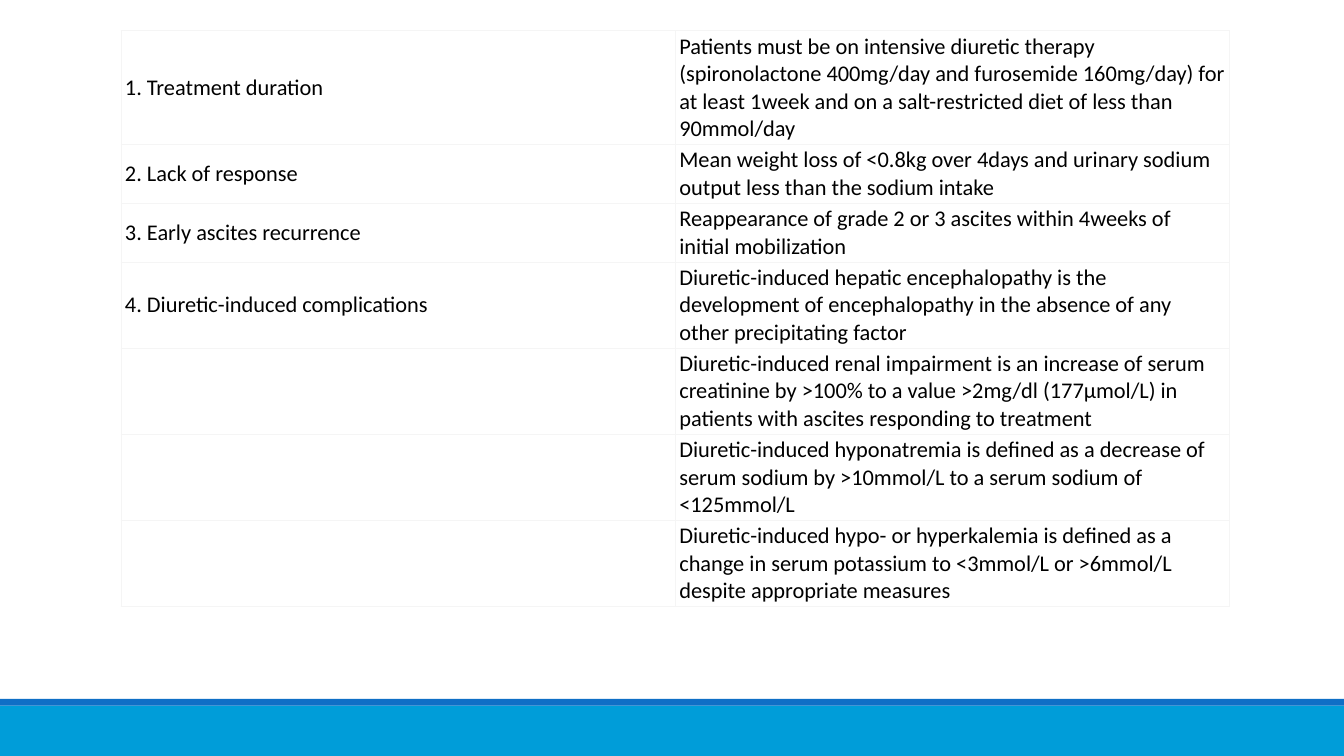
import pptx
import pptx.dml.color
import pptx.enum.shapes
import pptx.enum.text
import pptx.oxml.ns
import pptx.util
from lxml import etree

Cm = pptx.util.Cm
Pt = pptx.util.Pt
RGBColor = pptx.dml.color.RGBColor

WHITE = RGBColor(0xFF, 0xFF, 0xFF)
BLACK = RGBColor(0x00, 0x00, 0x00)
BORDER_GREY = RGBColor(0xF5, 0xF5, 0xF5)
FOOTER_BLUE = RGBColor(0x00, 0x9D, 0xD9)
STRIPE_BLUE = RGBColor(0x0F, 0x6F, 0xC6)

SLIDE_WIDTH, SLIDE_HEIGHT = 33.87, 19.05
FOOTER_HEIGHT, STRIPE_HEIGHT = 1.27, 0.17
TABLE_LEFT, TABLE_TOP, COLUMN_WIDTH = 3.05, 0.78, 13.97
LINE_HEIGHT, ROW_PADDING = 0.69, 0.1

# Criterion, definition, lines that the definition takes
CRITERIA = [
    ("1. Treatment duration",
     "Patients must be on intensive diuretic therapy (spironolactone 400mg/day and "
     "furosemide 160mg/day) for at least 1week and on a salt-restricted diet of less "
     "than 90mmol/day", 4),
    ("2. Lack of response",
     "Mean weight loss of <0.8kg over 4days and urinary sodium output less than the "
     "sodium intake", 2),
    ("3. Early ascites recurrence",
     "Reappearance of grade 2 or 3 ascites within 4weeks of initial mobilization", 2),
    ("4. Diuretic-induced complications",
     "Diuretic-induced hepatic encephalopathy is the development of encephalopathy in "
     "the absence of any other precipitating factor", 3),
    ("",
     "Diuretic-induced renal impairment is an increase of serum creatinine by >100% to "
     "a value >2mg/dl (177μmol/L) in patients with ascites responding to treatment", 3),
    ("",
     "Diuretic-induced hyponatremia is defined as a decrease of serum sodium by "
     ">10mmol/L to a serum sodium of <125mmol/L", 3),
    ("",
     "Diuretic-induced hypo- or hyperkalemia is defined as a change in serum potassium "
     "to <3mmol/L or >6mmol/L despite appropriate measures", 3),
]


class SlideBuilder:
    """Holds the style and the current slide."""

    font_format = {"name": "Calibri", "size": Pt(16), "bold": False}
    cell_format = {
        "margin_left": Cm(0.1), "margin_right": Cm(0.1),
        "margin_top": Cm(0.05), "margin_bottom": Cm(0.05),
        "vertical_anchor": pptx.enum.text.MSO_ANCHOR.MIDDLE,
    }
    border_width = Pt(0.75)

    def __init__(self, slide):
        self.slide = slide

    def add_band(self, top, height, color):
        """Draw a full-width band."""
        shape = self.slide.shapes.add_shape(
            pptx.enum.shapes.MSO_SHAPE.RECTANGLE,
            Cm(0), Cm(top), Cm(SLIDE_WIDTH), Cm(height))
        shape.shadow.inherit = False
        shape.fill.solid()
        shape.fill.fore_color.rgb = color
        shape.line.fill.background()

    def add_borders(self, cell):
        """Give a cell a thin line on all four sides."""
        properties = cell._tc.get_or_add_tcPr()
        for side in ("lnL", "lnR", "lnT", "lnB"):
            line = etree.SubElement(properties, pptx.oxml.ns.qn(f"a:{side}"),
                                    w=str(int(self.border_width)))
            fill = etree.SubElement(line, pptx.oxml.ns.qn("a:solidFill"))
            etree.SubElement(fill, pptx.oxml.ns.qn("a:srgbClr"), val=str(BORDER_GREY))

    def fill_cell(self, cell, text):
        """Write and style one cell."""
        for name, value in self.cell_format.items():
            setattr(cell, name, value)
        self.add_borders(cell)
        cell.fill.solid()
        cell.fill.fore_color.rgb = WHITE
        cell.text = text
        font = cell.text_frame.paragraphs[0].font
        for name, value in self.font_format.items():
            setattr(font, name, value)
        font.color.rgb = BLACK

    def add_criteria_table(self, criteria):
        """Draw the two-column table, each row as tall as its definition."""
        heights = [lines * LINE_HEIGHT + ROW_PADDING for _, _, lines in criteria]
        table = self.slide.shapes.add_table(
            len(criteria), 2, Cm(TABLE_LEFT), Cm(TABLE_TOP),
            Cm(2 * COLUMN_WIDTH), Cm(sum(heights))).table
        table.first_row = False
        table.horz_banding = False
        for column in table.columns:
            column.width = Cm(COLUMN_WIDTH)
        for row, height, (criterion, definition, _) in zip(table.rows, heights, criteria):
            row.height = Cm(height)
            for cell, text in zip(row.cells, (criterion, definition)):
                self.fill_cell(cell, text)


def main():
    presentation = pptx.Presentation()
    presentation.slide_width = Cm(SLIDE_WIDTH)
    presentation.slide_height = Cm(SLIDE_HEIGHT)
    slide = presentation.slides.add_slide(presentation.slide_layouts[6])
    builder = SlideBuilder(slide)

    # Footer
    footer_top = SLIDE_HEIGHT - FOOTER_HEIGHT
    builder.add_band(footer_top, FOOTER_HEIGHT, FOOTER_BLUE)
    builder.add_band(footer_top - STRIPE_HEIGHT, STRIPE_HEIGHT, STRIPE_BLUE)

    # Diagnostic criteria
    builder.add_criteria_table(CRITERIA)

    presentation.save("out.pptx")


if __name__ == "__main__":
    main()
